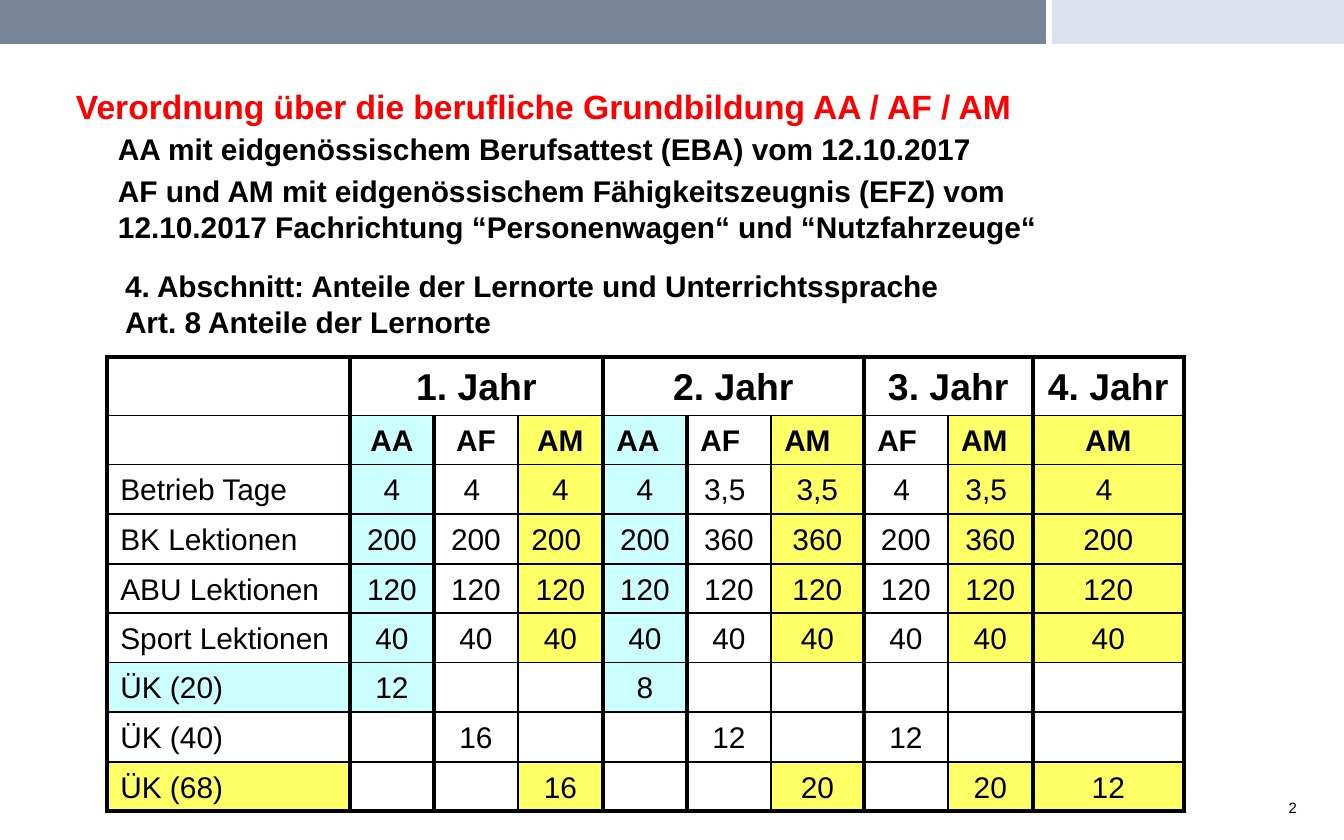
from lxml import etree
from pptx import Presentation
from pptx.dml.color import RGBColor
from pptx.enum.shapes import MSO_SHAPE
from pptx.enum.text import PP_ALIGN
from pptx.oxml.ns import qn
from pptx.util import Pt

LEFT, CENTER, RIGHT = PP_ALIGN.LEFT, PP_ALIGN.CENTER, PP_ALIGN.RIGHT
RECTANGLE = MSO_SHAPE.RECTANGLE
PX = 914400 / 134.4
FONT = "Arial"
BLACK = "000000"
CYAN, YELLOW = "CCFFFF", "FFFF66"

BARS = [((0, 0, 1046, 44), "788598"), ((1052, 0, 292, 44), "DCE3EC")]

HEADING = {"size": 16, "bold": True}
TEXTS = [
    ((64, 81, 1222, 64), (12, 5), 0, LEFT,
     {"size": 18, "bold": True, "color": "FE0000"},
     ["Verordnung über die berufliche Grundbildung AA / AF / AM"]),
    ((1079, 794, 230, 32), (12, 5), 0, RIGHT, {"size": 8}, ["2"]),
    ((112, 261, 1220, 86), (13, 7), 0, LEFT, HEADING,
     ["4. Abschnitt: Anteile der Lernorte und Unterrichtssprache",
      "Art. 8 Anteile der Lernorte"]),
    ((105, 124, 1230, 129), (13, 7), 3.2, LEFT, HEADING,
     ["AA mit eidgenössischem Berufsattest (EBA) vom 12.10.2017",
      "AF und AM mit eidgenössischem Fähigkeitszeugnis (EFZ) vom\v"
      "12.10.2017 Fachrichtung “Personenwagen“ und “Nutzfahrzeuge“"]),
]

YEARS = [("1. Jahr", 3), ("2. Jahr", 3), ("3. Jahr", 2), ("4. Jahr", 1)]
COURSES = ["", "AA", "AF", "AM", "AA", "AF", "AM", "AF", "AM", "AM"]
SHARES = [
    ["Betrieb Tage", "4", "4 ", "4", "4", "3,5 ", "3,5", "4 ", "3,5 ", "4 "],
    ["BK Lektionen", "200", "200", "200 ", "200", "360", "360", "200", "360", "200"],
    ["ABU Lektionen"] + ["120"] * 9,
    ["Sport Lektionen"] + ["40"] * 9,
    ["ÜK (20)", "12", "", "", "8", "", "", "", "", ""],
    ["ÜK (40)", "", "16", "", "", "12", "", "12", "", ""],
    ["ÜK (68)", "", "", "16", "", "", "20", "", "20", "12"],
]
COURSE_FILLS = {"AA": CYAN, "AM": YELLOW}
LABEL_FILLS = {"ÜK (20)": CYAN, "ÜK (68)": YELLOW}
LEFT_ALIGNED_COURSES = range(4, 9)
THIN_EDGES = {3, 6, 8}
TABLE_ORIGIN = (107, 357)
COLUMN_WIDTHS = [243, 84, 84, 85, 84, 84, 93, 84, 85, 151]
ROW_HEIGHTS = [58, 49, 49, 50, 49, 49, 49, 50, 49]


def px(value):
    return round(value * PX)


def rgb(color):
    return RGBColor.from_string(color)


def write(paragraph, text, align, size, bold=False, color=BLACK):
    paragraph.text = text
    paragraph.alignment = align
    paragraph.line_spacing = Pt(size * 1.2)
    for span in paragraph.runs:
        for name, value in {"name": FONT, "size": Pt(size), "bold": bold}.items():
            setattr(span.font, name, value)
        span.font.color.rgb = rgb(color)
    if not text:
        etree.SubElement(paragraph._p, qn("a:endParaRPr"), sz=str(size * 100))


def add_bar(page, place, color):
    bar = page.shapes.add_shape(RECTANGLE, *map(px, place))
    bar.shadow.inherit = False
    bar.fill.solid()
    bar.fill.fore_color.rgb = rgb(color)
    bar.line.fill.background()


def add_text(page, place, insets, gap, align, style, lines):
    frame = page.shapes.add_textbox(*map(px, place)).text_frame
    frame.word_wrap = True
    side, end = map(px, insets)
    for name, value in {"left": side, "right": side, "top": end, "bottom": end}.items():
        setattr(frame, f"margin_{name}", value)
    for index, line in enumerate(lines):
        para = frame.add_paragraph() if index else frame.paragraphs[0]
        write(para, line, align, **style)
        if index:
            para.space_before = Pt(gap)


def set_borders(cell, row, column):
    def vertical(edge):
        return 1 if row and edge in THIN_EDGES else 2.25

    def horizontal(edge):
        return 2.25 if edge in (0, len(ROW_HEIGHTS)) else 1

    widths = {"a:lnL": vertical(column), "a:lnR": vertical(column + 1),
              "a:lnT": horizontal(row), "a:lnB": horizontal(row + 1)}
    properties = cell._tc.get_or_add_tcPr()
    for tag, width in widths.items():
        line = etree.SubElement(properties, qn(tag), w=str(Pt(width)))
        fill = etree.SubElement(line, qn("a:solidFill"))
        etree.SubElement(fill, qn("a:srgbClr"), val=BLACK)


def add_shares_table(page):
    years = [""]
    for year, span in YEARS:
        years += [year] + [""] * (span - 1)
    rows = [years, COURSES] + SHARES
    size = (sum(COLUMN_WIDTHS), sum(ROW_HEIGHTS))
    table = page.shapes.add_table(len(rows), len(COURSES), *map(px, TABLE_ORIGIN + size)).table
    for column, width in zip(table.columns, COLUMN_WIDTHS):
        column.width = px(width)
    for row, height in zip(table.rows, ROW_HEIGHTS):
        row.height = px(height)

    for r, values in enumerate(rows):
        for c, text in enumerate(values):
            cell = table.cell(r, c)
            left = c == 0 or (r == 1 and c in LEFT_ALIGNED_COURSES)
            write(cell.text_frame.paragraphs[0], text, LEFT if left else CENTER,
                  16 if r else 20, bold=r < 2)
            set_borders(cell, r, c)
            color = LABEL_FILLS.get(text)
            if r and c and text:
                color = COURSE_FILLS.get(COURSES[c])
            if color:
                cell.fill.solid()
                cell.fill.fore_color.rgb = rgb(color)
            else:
                cell.fill.background()

    start = 1
    for _, span in YEARS:
        if span > 1:
            table.cell(0, start).merge(table.cell(0, start + span - 1))
        start += span


def main():
    deck = Presentation()
    deck.slide_width, deck.slide_height = px(1344), px(840)
    page = deck.slides.add_slide(deck.slide_layouts[6])
    for bar in BARS:
        add_bar(page, *bar)
    for text in TEXTS:
        add_text(page, *text)
    add_shares_table(page)
    deck.save("out.pptx")


if __name__ == "__main__":
    main()
